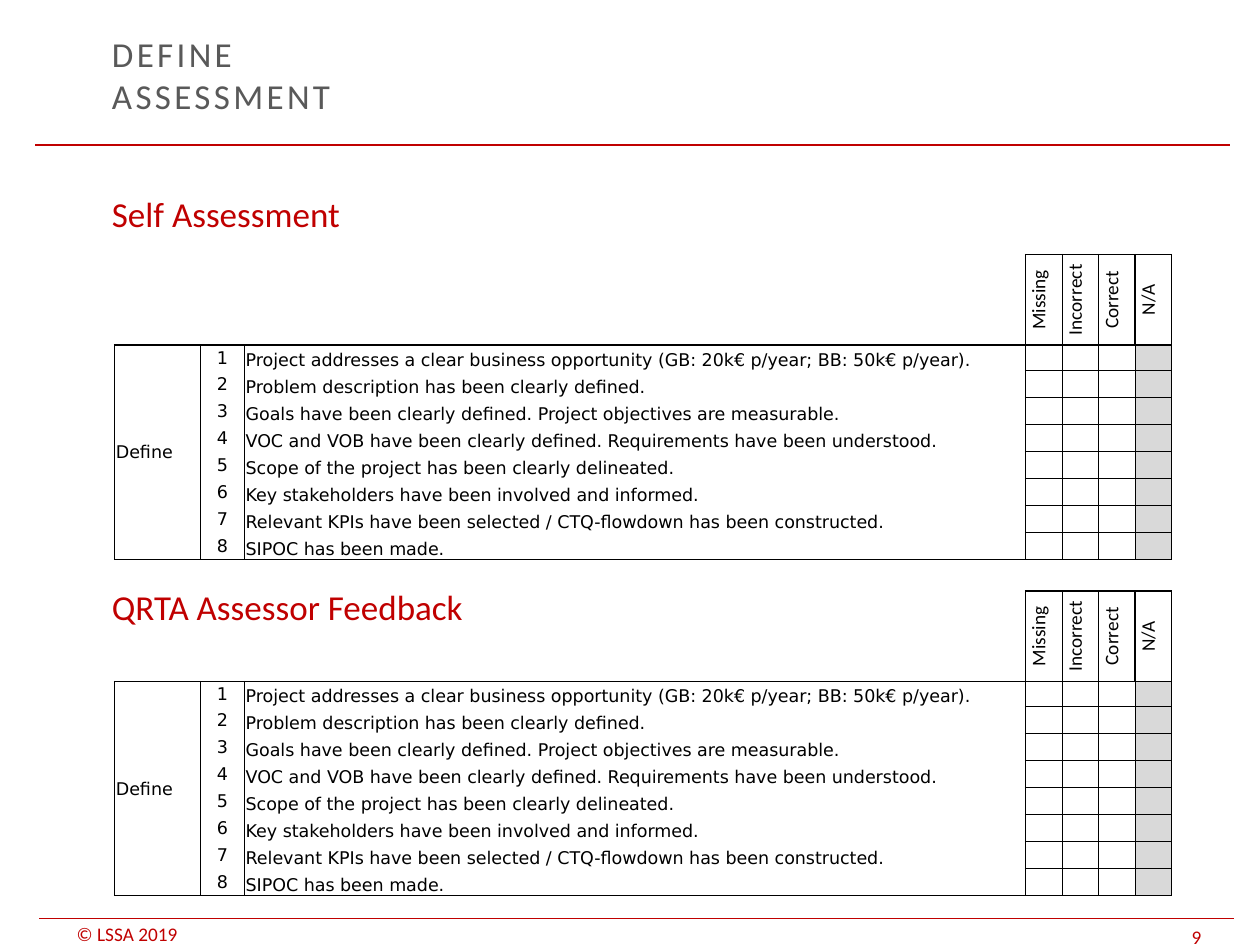
import lxml.etree
import pptx
import pptx.dml.color
import pptx.enum.shapes
import pptx.enum.text
import pptx.oxml.ns
import pptx.util
from pptx.util import Inches

RED = "C00000"
BLACK = "000000"
ANCHOR = pptx.enum.text.MSO_ANCHOR
CENTER = pptx.enum.text.PP_ALIGN.CENTER
qn = pptx.oxml.ns.qn


def color(value):
    return pptx.dml.color.RGBColor.from_string(value)


def add_text(text, left, top, width, height, size, text_color, anchor, margin):
    """Add a one-paragraph text box; margin is its top and bottom inset in inches."""
    box = slide.shapes.add_textbox(Inches(left), Inches(top), Inches(width), Inches(height))
    frame = box.text_frame
    frame.word_wrap = True
    frame.vertical_anchor = anchor
    frame.margin_top = frame.margin_bottom = Inches(margin)
    paragraph = frame.paragraphs[0]
    paragraph.text = text
    paragraph.font.size = pptx.util.Pt(size)
    paragraph.font.name = "Calibri"
    paragraph.font.color.rgb = color(text_color)
    return paragraph


presentation = pptx.Presentation()
presentation.slide_width = Inches(10)
presentation.slide_height = Inches(7.5)
slide = presentation.slides.add_slide(presentation.slide_layouts[6])

# Footer and rules
add_text("© LSSA 2019", 0.51, 7.32, 1.42, 0.18, 11, RED, ANCHOR.BOTTOM, 0)
add_text("9", 9.36, 7.31, 0.64, 0.22, 11, RED, ANCHOR.BOTTOM, 0)
for left, top in [(0.28, 1.15), (0.31, 7.29)]:
    rule = slide.shapes.add_connector(
        pptx.enum.shapes.MSO_CONNECTOR.STRAIGHT,
        Inches(left), Inches(top), Inches(left + 9.48), Inches(top))
    rule.line.color.rgb = color(RED)
    rule.line.width = pptx.util.Pt(0.75)
    lxml.etree.SubElement(rule._element.spPr, qn("a:effectLst"))

# Title and section headings
title = add_text("DEFINE\vASSESSMENT", 0.79, 0.26, 7.09, 0.66, 20, "595959", ANCHOR.MIDDLE, 0.05)
for run in title.runs:
    run._r.get_or_add_rPr().set("spc", "190")
add_text("Self Assessment", 0.79, 1.48, 8.66, 0.44, 20, RED, ANCHOR.TOP, 0.05)
add_text("QRTA Assessor Feedback", 0.79, 4.6, 7, 0.44, 20, RED, ANCHOR.TOP, 0.05)

# Assessment tables
ratings = ["Missing", "Incorrect", "Correct", "N/A"]
criteria = [
    "Project addresses a clear business opportunity (GB: 20k€ p/year; BB: 50k€ p/year).",
    "Problem description has been clearly defined.",
    "Goals have been clearly defined. Project objectives are measurable.",
    "VOC and VOB have been clearly defined. Requirements have been understood.",
    "Scope of the project has been clearly delineated.",
    "Key stakeholders have been involved and informed.",
    "Relevant KPIs have been selected / CTQ-flowdown has been constructed.",
    "SIPOC has been made.",
]
grid = [["", "", ""] + ratings]
for number, criterion in enumerate(criteria, 1):
    grid.append(["Define" if number == 1 else "", str(number), criterion, "", "", "", ""])

column_widths = [0.68, 0.35, 6.2] + [0.29] * 4
table_height = 2.42
header_height, first_height = 0.72, 0.2
other_height = (table_height - header_height - first_height) / 7
row_heights = [header_height, first_height] + [other_height] * 7
last_row = len(grid) - 1

for table_top in (2.02, 4.69):
    table = slide.shapes.add_table(
        len(grid), len(column_widths), Inches(0.91), Inches(table_top),
        Inches(sum(column_widths)), Inches(table_height)).table
    table.first_row = table.horz_banding = False
    for column, width in zip(table.columns, column_widths):
        column.width = Inches(width)
    for row, height in zip(table.rows, row_heights):
        row.height = Inches(height)
    table.cell(1, 0).merge(table.cell(last_row, 0))

    for row_index, texts in enumerate(grid):
        header = row_index == 0
        for column_index, text in enumerate(texts):
            cell = table.cell(row_index, column_index)
            rating = column_index >= 3
            cell.margin_left = cell.margin_right = cell.margin_top = Inches(0.01)
            cell.margin_bottom = 0
            bottom_aligned = header or column_index == 2
            cell.vertical_anchor = ANCHOR.BOTTOM if bottom_aligned else ANCHOR.MIDDLE

            paragraph = cell.text_frame.paragraphs[0]
            if text:
                paragraph.text = text
                paragraph.font.size = pptx.util.Pt(11 if header else 10)
                paragraph.font.name = "Calibri" if header else "DejaVu Sans"
                paragraph.font.color.rgb = color(BLACK)
                if header or column_index == 1:
                    paragraph.alignment = CENTER
            else:
                lxml.etree.SubElement(paragraph._p, qn("a:endParaRPr"), sz="1000")

            # Border widths in points; 0 leaves the edge open
            inner = 0.5 if rating else 0
            left = 0.5 if column_index == 4 or (column_index == 6 and not header) else 1
            right = 0.5 if column_index == 3 or (column_index == 5 and not header) else 1
            top = 1 if row_index == 1 else inner
            bottom = 1 if row_index in (0, last_row) else inner
            if header:
                top = 1 if rating else 0
                left = left if rating else 0
                right = right if column_index >= 2 else 0
            if column_index == 0 and not header:
                bottom = 1
            properties = cell._tc.get_or_add_tcPr()
            for edge, points in zip("LRTB", (left, right, top, bottom)):
                line = lxml.etree.SubElement(
                    properties, qn("a:ln" + edge), w=str(pptx.util.Pt(points)))
                if points:
                    fill = lxml.etree.SubElement(line, qn("a:solidFill"))
                    lxml.etree.SubElement(fill, qn("a:srgbClr"), val=BLACK)
                else:
                    lxml.etree.SubElement(line, qn("a:noFill"))

            if header and rating:
                properties.set("vert", "vert270")
            if column_index == 6 and not header:
                cell.fill.solid()
                cell.fill.fore_color.rgb = color("D9D9D9")
            else:
                cell.fill.background()

presentation.save("out.pptx")
